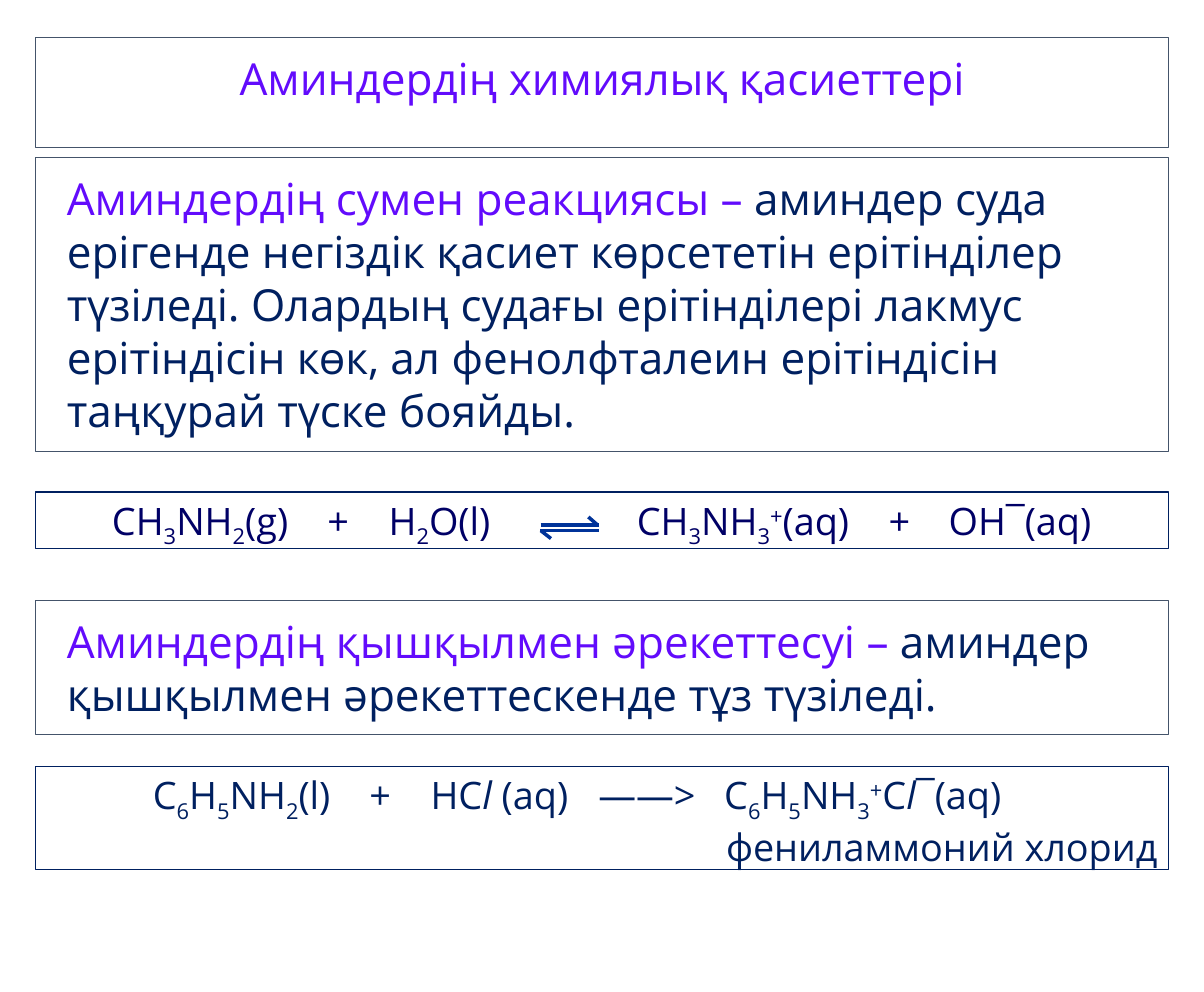
from pptx import Presentation
from pptx.dml.color import RGBColor
from pptx.enum import shapes, text
from pptx.oxml.ns import qn
from pptx.util import Inches, Pt
from lxml import etree

VIOLET = RGBColor(0x62, 0x0B, 0xFC)
NAVY = RGBColor(0x00, 0x20, 0x60)
INDIGO = RGBColor(0x00, 0x00, 0x66)
BLUE = RGBColor(0x00, 0x33, 0x99)
SLATE = RGBColor(0x44, 0x54, 0x6A)
FONT = "Open Sans"
LEFT, WIDTH = 0.31, 10
BASELINES = {"_": "-25000", "^": "30000"}


def format_box(sp, top, height, line, inset_x, inset_y):
    sp.left, sp.top = Inches(LEFT), Inches(top)
    sp.width, sp.height = Inches(WIDTH), Inches(height)
    sp.line.color.rgb = line
    sp.line.width = Pt(0.75)
    tf = sp.text_frame
    tf.word_wrap = True
    tf.auto_size = text.MSO_AUTO_SIZE.SHAPE_TO_FIT_TEXT
    tf.vertical_anchor = text.MSO_ANCHOR.TOP
    tf.margin_left = tf.margin_right = Inches(inset_x)
    tf.margin_top = tf.margin_bottom = Inches(inset_y)
    return tf


def add_run(p, words, size, color):
    r = p.add_run()
    r.text = words
    r.font.name, r.font.size = FONT, Pt(size)
    r.font.color.rgb = color
    return r


prs = Presentation()
prs.slide_width, prs.slide_height = Inches(10.62), Inches(8.75)
s = prs.slides.add_slide(prs.slide_layouts[5])

tf = format_box(s.shapes.title, 0.33, 0.71, SLATE, 0.28, 0.12)
p = tf.paragraphs[0]
p.alignment = text.PP_ALIGN.CENTER
add_run(p, "Аминдердің химиялық қасиеттері", 28, VIOLET)

# Reaction descriptions: top, height, lead, explanation
reactions = [
    (1.39, 2.59, "Аминдердің сумен реакциясы – ",
     "аминдер суда ерігенде негіздік қасиет көрсететін ерітінділер түзіледі. "
     "Олардың судағы ерітінділері лакмус ерітіндісін көк, "
     "ал фенолфталеин ерітіндісін таңқурай түске бояйды."),
    (5.3, 1.18, "Аминдердің қышқылмен әрекеттесуі – ",
     "аминдер қышқылмен әрекеттескенде тұз түзіледі."),
]
for top, height, lead, explanation in reactions:
    sp = s.shapes.add_textbox(0, 0, 0, 0)
    p = format_box(sp, top, height, SLATE, 0.28, 0.12).paragraphs[0]
    add_run(p, lead, 28, VIOLET)
    add_run(p, explanation, 28, NAVY)

# Equations: pieces split by "|"; "_" lowers, "^" raises, "*" slants a piece
equations = [
    (4.34, 0.5, INDIGO, (0.58, 2.48, 3.02, 5.21, 7.43, 7.96),
     "\tCH|_3|NH|_2|(g)\t+\tH|_2|O(l)\tCH|_3|NH|_3|^+|(aq)\t+\tOH¯(aq)", None),
    (6.76, 0.91, NAVY, (0.94, 2.85, 3.39, 4.87, 5.98),
     "\tC|_6|H|_5|NH|_2|(l)\t+\tHC|*l |(aq)\t——>\tC|_6|H|_5|NH|_3|^+|C|*l|¯(aq)",
     "фениламмоний хлорид"),
]
for top, height, color, stops, formula, product in equations:
    sp = s.shapes.add_textbox(0, 0, 0, 0)
    tf = format_box(sp, top, height, NAVY, 0.1, 0.05)
    p = tf.paragraphs[0]
    p.alignment = text.PP_ALIGN.LEFT
    tabs = etree.SubElement(p._p.get_or_add_pPr(), qn("a:tabLst"))
    for stop in stops:
        etree.SubElement(tabs, qn("a:tab"), pos=str(Inches(stop)), algn="l")
    for piece in formula.split("|"):
        mark = piece[0]
        r = add_run(p, piece.lstrip("_^*") if mark in "_^*" else piece, 24, color)
        if mark in BASELINES:
            r.font._element.set("baseline", BASELINES[mark])
        elif mark == "*":
            r.font.italic = True
    if product:
        p = tf.add_paragraph()
        p.alignment = text.PP_ALIGN.RIGHT
        add_run(p, product, 24, color)

# Equilibrium arrows
strokes = [
    (4.77, 4.63, 5.28, 4.63), (5.19, 4.56, 5.27, 4.63),
    (5.28, 4.68, 4.76, 4.68), (4.86, 4.75, 4.77, 4.68),
]
for stroke in strokes:
    cx = s.shapes.add_connector(shapes.MSO_CONNECTOR.STRAIGHT,
                                *(Inches(v) for v in stroke))
    cx.line.color.rgb = BLUE
    cx.line.width = Pt(2.25)
    etree.SubElement(cx._element.spPr, qn("a:effectLst"))

prs.save("out.pptx")
